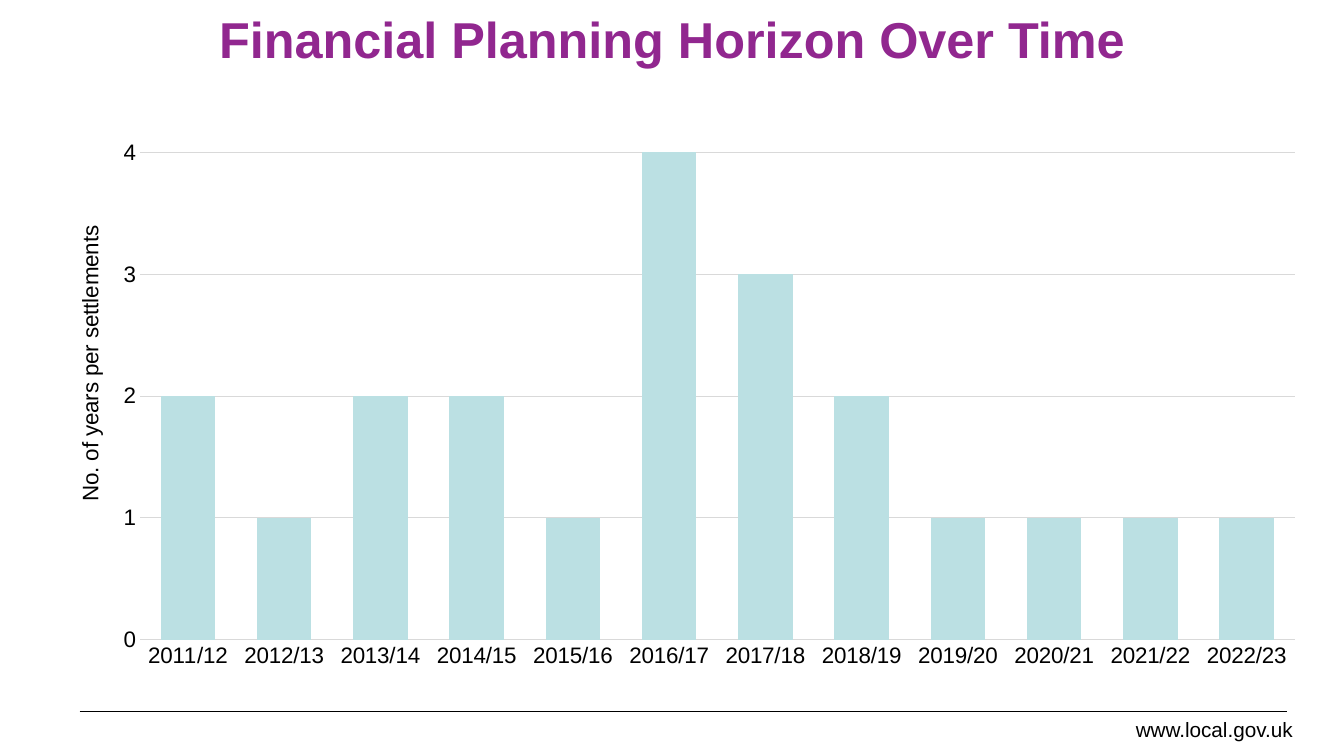
import pptx
import pptx.util
import pptx.chart.data
import pptx.dml.color
import pptx.enum.chart
import pptx.enum.shapes
import pptx.enum.text
import lxml.etree

Inches, Pt = pptx.util.Inches, pptx.util.Pt
ALIGN = pptx.enum.text.PP_ALIGN
ANCHOR = pptx.enum.text.MSO_ANCHOR

HEADING = "Financial Planning Horizon Over Time"
WEBSITE = "www.local.gov.uk"
YEARS_LABEL = "No. of years per settlements"
SETTLEMENT_YEARS = [2, 1, 2, 2, 1, 4, 3, 2, 1, 1, 1, 1]
FIRST_YEAR = 2011
FINANCIAL_YEARS = [f"{FIRST_YEAR + i}/{(FIRST_YEAR + i + 1) % 100}"
                   for i in range(len(SETTLEMENT_YEARS))]
PLOT_LAYOUT = {"layoutTarget": "inner", "xMode": "edge", "yMode": "edge",
               "x": 0.074, "y": 0.035, "w": 0.915, "h": 0.879}
LABEL_LAYOUT = {"xMode": "edge", "yMode": "edge", "x": 0.02, "y": 0.16}
BLACK, PURPLE, AQUA, GREY = "000000", "91278F", "BBE0E3", "D9D9D9"


def colour(value):
    return pptx.dml.color.RGBColor.from_string(value)


def apply(target, values):
    for name, value in values.items():
        setattr(target, name, value)


def style_font(font, size, shade, bold=False):
    apply(font, {"name": "Arial", "size": Pt(size), "bold": bold})
    font.color.rgb = colour(shade)


def style_line(line, shade):
    line.color.rgb = colour(shade)
    line.width = Pt(0.75)


def add_text(slide, box, words, size, shade, align, bold=False, **frame_format):
    frame = slide.shapes.add_textbox(*map(Inches, box)).text_frame
    apply(frame, frame_format)
    paragraph = frame.paragraphs[0]
    paragraph.alignment = align
    run = paragraph.add_run()
    run.text = words
    style_font(run.font, size, shade, bold)


def set_layout(element, values, after):
    for old in element.findall(pptx.oxml.ns.qn("c:layout")):
        element.remove(old)
    layout = lxml.etree.Element(pptx.oxml.ns.qn("c:layout"))
    manual = lxml.etree.SubElement(layout, pptx.oxml.ns.qn("c:manualLayout"))
    for name, value in values.items():
        lxml.etree.SubElement(manual, pptx.oxml.ns.qn(f"c:{name}")).set("val", str(value))
    if after is None:
        element.insert(0, layout)
    else:
        after.addnext(layout)


def add_horizon_chart(slide):
    horizon = pptx.chart.data.CategoryChartData()
    horizon.categories = FINANCIAL_YEARS
    horizon.add_series("Series 1", SETTLEMENT_YEARS)
    chart = slide.shapes.add_chart(
        pptx.enum.chart.XL_CHART_TYPE.COLUMN_CLUSTERED,
        *map(Inches, (0.46, 1.32, 12.52, 5.5)), horizon).chart
    apply(chart, {"has_legend": False, "has_title": False})
    style_font(chart.font, 16, BLACK)

    bars = chart.plots[0]
    apply(bars, {"gap_width": 77, "overlap": -35, "vary_by_categories": False})
    bars.series[0].format.fill.solid()
    bars.series[0].format.fill.fore_color.rgb = colour(AQUA)

    years, count = chart.category_axis, chart.value_axis
    for axis in (years, count):
        axis.major_tick_mark = pptx.enum.chart.XL_TICK_MARK.NONE
        style_font(axis.tick_labels.font, 16, BLACK)
    style_line(years.format.line, GREY)
    apply(count, {"minimum_scale": 0, "maximum_scale": 4, "major_unit": 1,
                  "has_major_gridlines": True})
    style_line(count.major_gridlines.format.line, GREY)
    count.format.line.fill.background()

    label = count.axis_title
    label.text_frame.text = YEARS_LABEL
    style_font(label.text_frame.paragraphs[0].runs[0].font, 16, BLACK)
    body = label.text_frame._txBody.bodyPr
    body.set("rot", "-5400000")
    body.set("vert", "horz")
    label_element = label._element
    set_layout(label_element, LABEL_LAYOUT, label_element.find(pptx.oxml.ns.qn("c:tx")))
    set_layout(chart._chartSpace.chart.plotArea, PLOT_LAYOUT, None)


def main():
    deck = pptx.Presentation()
    apply(deck, {"slide_width": Inches(13.33), "slide_height": Inches(7.5)})
    slide = deck.slides.add_slide(deck.slide_layouts[6])

    footer_rule = slide.shapes.add_connector(
        pptx.enum.shapes.MSO_CONNECTOR.STRAIGHT,
        *map(Inches, (0.79, 7.06, 12.76, 7.06)))
    style_line(footer_rule.line, BLACK)
    lxml.etree.SubElement(footer_rule._element.spPr, pptx.oxml.ns.qn("a:effectLst"))

    add_text(slide, (11.14, 7.06, 1.78, 0.35), WEBSITE, 14.8, BLACK, ALIGN.RIGHT,
             word_wrap=False, auto_size=pptx.enum.text.MSO_AUTO_SIZE.SHAPE_TO_FIT_TEXT)
    add_text(slide, (1.14, 0, 11.06, 0.76), HEADING, 36, PURPLE, ALIGN.CENTER, bold=True,
             word_wrap=True, vertical_anchor=ANCHOR.MIDDLE)
    add_horizon_chart(slide)
    deck.save("out.pptx")


if __name__ == "__main__":
    main()
